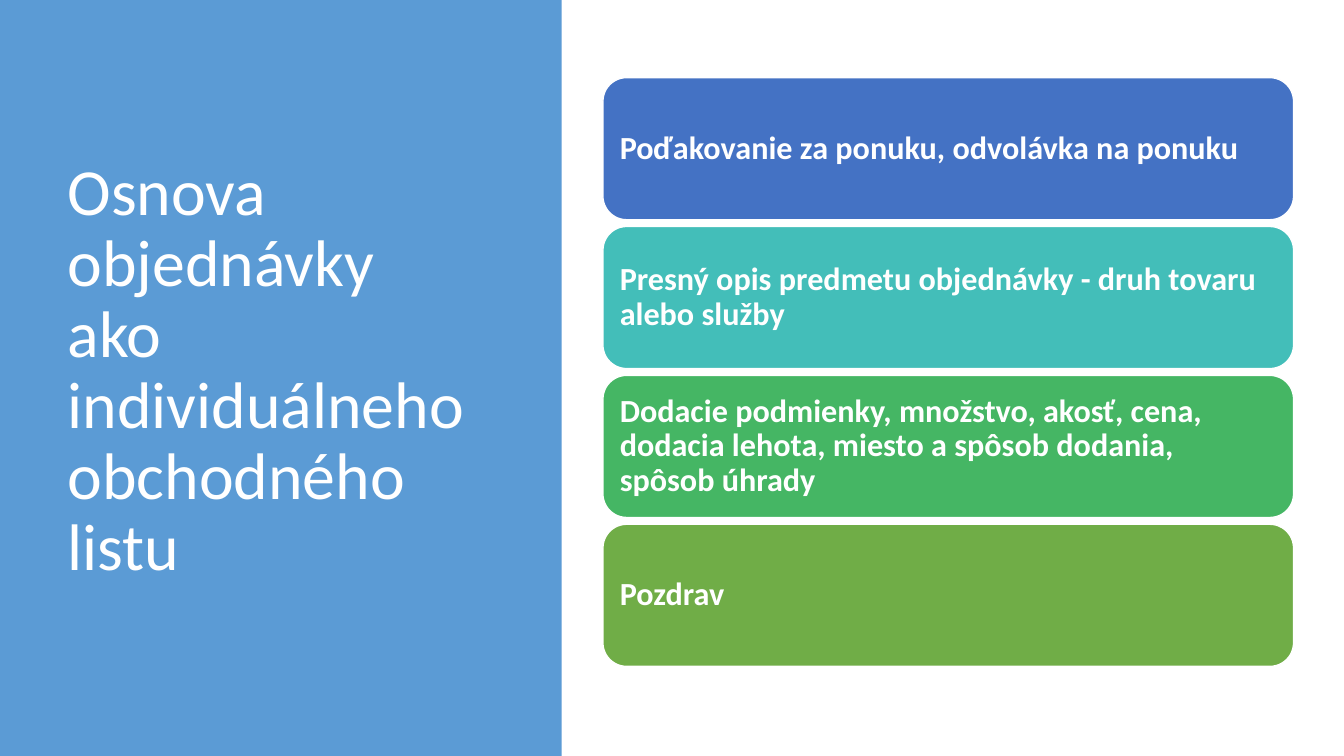
from dataclasses import dataclass

from pptx import Presentation
from pptx.dml.color import RGBColor
from pptx.enum.shapes import MSO_SHAPE
from pptx.enum.text import MSO_ANCHOR, MSO_AUTO_SIZE, PP_ALIGN
from pptx.util import Inches, Pt


@dataclass(frozen=True)
class Theme:
    """Colours and type of the slide."""

    font: str = "Calibri"
    panel: str = "5B9BD5"
    light: str = "FFFFFF"
    steps: tuple = ("4472C4", "43BEB9", "45B664", "70AD47")
    title_size: int = 47
    step_size: int = 23


THEME = Theme()
WIDTH, HEIGHT = 13.33, 7.5
STEP_LEFT, STEP_TOP = 5.98, 0.77
STEP_WIDTH, STEP_HEIGHT, STEP_PITCH = 6.85, 1.41, 1.477
HEADING = "Osnova objednávky ako individuálneho obchodného listu"
OUTLINE = (
    "Poďakovanie za ponuku, odvolávka na ponuku",
    "Presný opis predmetu objednávky - druh tovaru alebo služby",
    "Dodacie podmienky, množstvo, akosť, cena, dodacia lehota, "
    "miesto a spôsob dodania, spôsob úhrady",
    "Pozdrav",
)


def write(frame, wording, size, bold=False):
    """Write one left-aligned, vertically centred paragraph."""
    frame.word_wrap = True
    frame.auto_size = MSO_AUTO_SIZE.NONE
    frame.vertical_anchor = MSO_ANCHOR.MIDDLE
    paragraph = frame.paragraphs[0]
    paragraph.alignment = PP_ALIGN.LEFT
    paragraph.line_spacing = 0.9
    run = paragraph.add_run()
    run.text = wording
    run.font.name = THEME.font
    run.font.size = Pt(size)
    run.font.bold = bold
    run.font.color.rgb = RGBColor.from_string(THEME.light)


def add_block(slide, preset, box, colour):
    """Add a flat filled shape without outline or shadow."""
    block = slide.shapes.add_shape(preset, *map(Inches, box))
    block.shadow.inherit = False
    block.fill.solid()
    block.fill.fore_color.rgb = RGBColor.from_string(colour)
    block.line.fill.background()
    return block


def add_heading(slide):
    """Set the title on a full-height panel."""
    heading = slide.shapes.title
    panel = add_block(slide, MSO_SHAPE.RECTANGLE, (0, 0, 5.57, HEIGHT), THEME.panel)
    heading.element.addprevious(panel.element)
    heading.left, heading.top = Inches(0.57), Inches(0.68)
    heading.width, heading.height = Inches(4.16), Inches(6.02)
    write(heading.text_frame, HEADING, THEME.title_size)


def add_step(slide, row, wording, colour):
    """Add one step of the outline in its row."""
    box = (STEP_LEFT, STEP_TOP + row * STEP_PITCH, STEP_WIDTH, STEP_HEIGHT)
    step = add_block(slide, MSO_SHAPE.ROUNDED_RECTANGLE, box, colour)
    step.line.color.rgb = RGBColor.from_string(THEME.light)
    step.line.width = Pt(1)
    frame = step.text_frame
    frame.margin_left = frame.margin_right = Inches(0.1)
    frame.margin_top = frame.margin_bottom = Inches(0.1)
    write(frame, wording, THEME.step_size, bold=True)


def main():
    """Build and save the slide."""
    deck = Presentation()
    deck.slide_width, deck.slide_height = Inches(WIDTH), Inches(HEIGHT)
    slide = deck.slides.add_slide(deck.slide_layouts.get_by_name("Title Only"))
    add_heading(slide)
    for row, (wording, colour) in enumerate(zip(OUTLINE, THEME.steps)):
        add_step(slide, row, wording, colour)
    deck.save("out.pptx")


if __name__ == "__main__":
    main()
